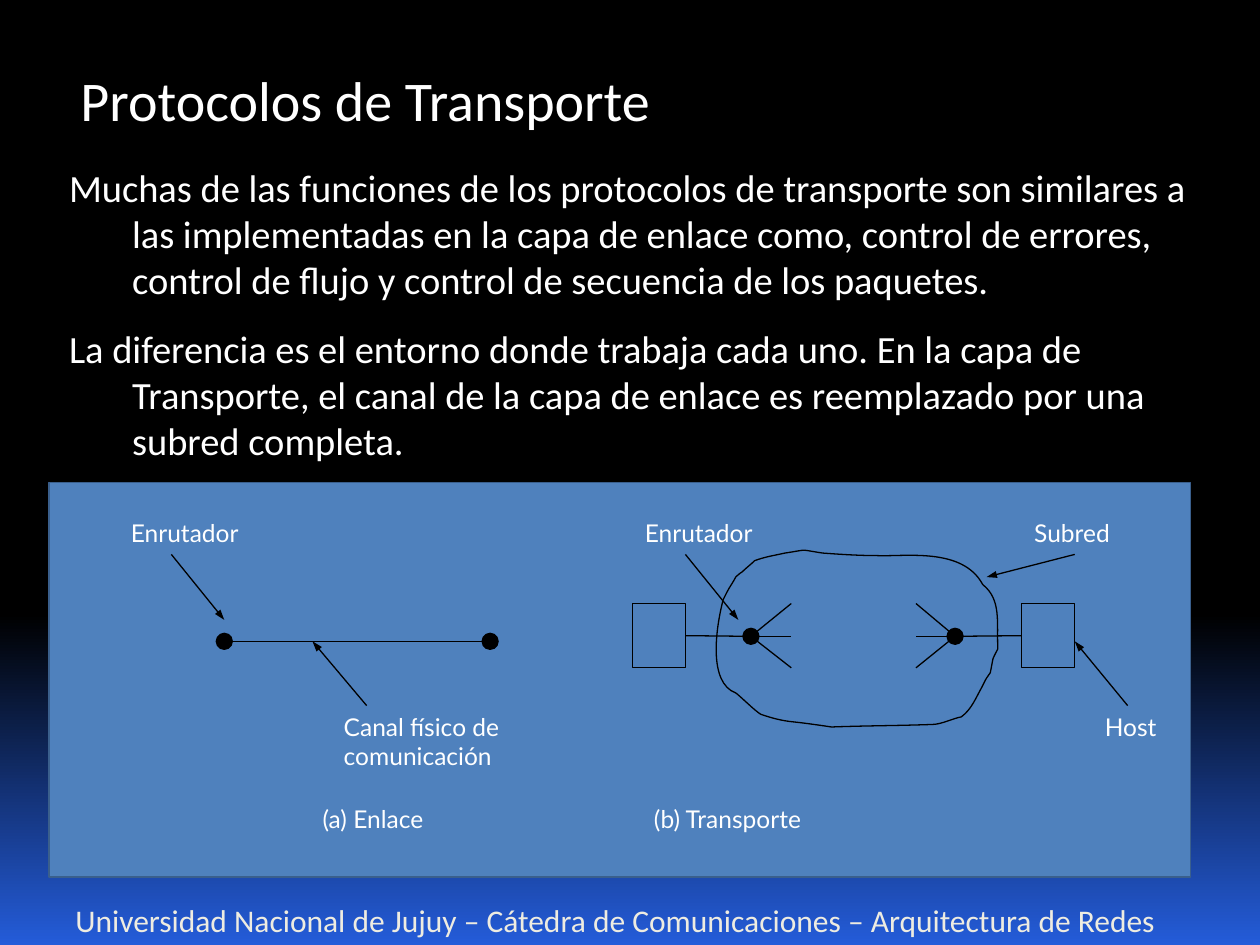
"""Build a slide comparing the link layer and the transport layer."""
from lxml import etree
from pptx import Presentation
from pptx.dml.color import RGBColor
from pptx.enum.shapes import MSO_CONNECTOR, MSO_SHAPE
from pptx.enum.text import MSO_ANCHOR
from pptx.oxml.ns import qn
from pptx.util import Inches, Pt


def color(value):
    return RGBColor.from_string(value)


def add_line(start, end, **ends):
    line = group.shapes.add_connector(
        MSO_CONNECTOR.STRAIGHT, *[Inches(value) for value in start + end])
    line.line.color.rgb = color("000000")
    line.line.width = Pt(0.75)
    properties = line._element.spPr
    for name, kind in ends.items():
        width, length = ("lg", "lg") if kind == "oval" else ("sm", "med")
        etree.SubElement(properties.find(qn("a:ln")), qn(f"a:{name}End"),
                         type=kind, w=width, len=length)
    etree.SubElement(properties, qn("a:effectLst"))
    return line


presentation = Presentation()
presentation.slide_width = Inches(10)
presentation.slide_height = Inches(7.5)
slide = presentation.slides.add_slide(presentation.slide_layouts[6])

fill = slide.background.fill
fill.gradient()
fill.gradient_angle = 270
for stop, position, value in zip(fill.gradient_stops, (0.65, 1), ("000000", "245CD9")):
    stop.position = position
    stop.color.rgb = color(value)

footer = slide.shapes.add_textbox(Inches(0.5), Inches(7.1), Inches(9.25), Inches(0.4))
footer.text_frame.word_wrap = True
footer.text_frame.vertical_anchor = MSO_ANCHOR.BOTTOM
paragraph = footer.text_frame.paragraphs[0]
paragraph.text = "Universidad Nacional de Jujuy – Cátedra de Comunicaciones – Arquitectura de Redes"
paragraph.font.name = "Calibri"
paragraph.font.size = Pt(18)
paragraph.font.color.rgb = color("EEECE1")

title = "Protocolos de Transporte"
body = (
    "Muchas de las funciones de los protocolos de transporte son similares a las "
    "implementadas en la capa de enlace como, control de errores, control de flujo "
    "y control de secuencia de los paquetes.\n"
    "La diferencia es el entorno donde trabaja cada uno. En la capa de Transporte, "
    "el canal de la capa de enlace es reemplazado por una subred completa."
)
for text, box, size, margin, indent in (
    (title, (0.47, 0.47, 9.08, 0.75), 32, 0.45, -0.38),
    (body, (0.31, 1.25, 9.32, 2.66), 22, 0.64, -0.5),
):
    shape = slide.shapes.add_textbox(*[Inches(value) for value in box])
    shape.text_frame.word_wrap = True
    shape.text_frame.text = text
    for paragraph in shape.text_frame.paragraphs:
        paragraph.space_before = Pt(7)
        paragraph.space_after = Pt(6)
        paragraph.font.name = "Calibri"
        paragraph.font.size = Pt(size)
        paragraph.font.color.rgb = color("FFFFFF")
        properties = paragraph._p.get_or_add_pPr()
        properties.set("marL", str(Inches(margin)))
        properties.set("indent", str(Inches(indent)))

group = slide.shapes.add_group_shape()
panel = group.shapes.add_shape(
    MSO_SHAPE.RECTANGLE, Inches(0.39), Inches(3.83), Inches(9.06), Inches(3.13))
panel.shadow.inherit = False
panel.fill.solid()
panel.fill.fore_color.rgb = color("4F81BD")
panel.line.color.rgb = color("3A5F8C")
panel.line.width = Pt(1)

add_line((1.78, 5.09), (3.89, 5.09), head="oval", tail="oval")

middle = 5.05
for host_left, host_side, site, node, branch_end in (
    (5.02, 5.44, 3, 5.96, 6.28),
    (8.11, 8.11, 1, 7.58, 7.27),
):
    host = group.shapes.add_shape(
        MSO_SHAPE.RECTANGLE, Inches(host_left), Inches(4.79), Inches(0.42), Inches(0.51))
    host.shadow.inherit = False
    host.fill.background()
    host.line.color.rgb = color("000000")
    host.line.width = Pt(0.75)
    link = add_line((host_side, middle), (node, middle), tail="oval")
    link.begin_connect(host, site)
    for branch_y in (4.79, middle, 5.3):
        add_line((node, middle), (branch_end, branch_y))

subnet_start = (6.23, 4.39)
subnet_curves = (
    (6.14, 4.41, 6.07, 4.42, 5.99, 4.45), (5.96, 4.48, 5.92, 4.51, 5.89, 4.54),
    (5.87, 4.55, 5.84, 4.58, 5.84, 4.58), (5.82, 4.62, 5.79, 4.66, 5.77, 4.7),
    (5.76, 4.72, 5.74, 4.76, 5.74, 4.76), (5.68, 4.99, 5.62, 5.42, 5.84, 5.5),
    (5.87, 5.52, 6, 5.65, 6.04, 5.67), (6.13, 5.7, 6.2, 5.72, 6.3, 5.73),
    (6.4, 5.74, 6.6, 5.77, 6.6, 5.77), (6.87, 5.76, 7.13, 5.76, 7.4, 5.75),
    (7.47, 5.75, 7.57, 5.7, 7.63, 5.69), (7.71, 5.63, 7.74, 5.55, 7.79, 5.46),
    (7.8, 5.44, 7.81, 5.42, 7.82, 5.4), (7.83, 5.38, 7.86, 5.34, 7.86, 5.34),
    (7.89, 5.19, 7.87, 5.25, 7.92, 5.15), (7.91, 4.94, 7.95, 4.76, 7.8, 4.64),
    (7.64, 4.34, 7.18, 4.42, 6.96, 4.41), (6.82, 4.41, 6.67, 4.4, 6.53, 4.39),
    (6.33, 4.36, 6.43, 4.36, 6.23, 4.39),
)
builder = group.shapes.build_freeform(*[Inches(value) for value in subnet_start])
builder.add_line_segments(
    [(Inches(curve[i]), Inches(curve[i + 1])) for curve in subnet_curves for i in (0, 2, 4)],
    close=True)
subnet = builder.convert_to_shape()
segments = list(subnet._element.iter(qn("a:lnTo")))
for first in range(0, len(subnet_curves) * 3, 3):
    bezier = etree.Element(qn("a:cubicBezTo"))
    segments[first].addprevious(bezier)
    for segment in segments[first:first + 3]:
        bezier.append(segment[0])
        segment.getparent().remove(segment)
subnet.shadow.inherit = False
subnet.fill.background()
subnet.line.color.rgb = color("000000")
subnet.line.width = Pt(0.75)

for start, end in (
    ((1.36, 4.4), (1.78, 4.92)),
    ((2.91, 5.6), (2.48, 5.09)),
    ((5.44, 4.4), (5.86, 4.92)),
    ((8.53, 4.4), (7.83, 4.58)),
    ((8.95, 5.6), (8.53, 5.09)),
):
    add_line(start, end, tail="triangle")

for text, box in (
    ("Enrutador", (0.94, 4.06, 1.25, 0.34)),
    ("Canal físico de comunicación", (2.63, 5.6, 1.67, 0.68)),
    ("Enrutador", (5.02, 4.06, 1.23, 0.34)),
    ("Subred", (8.11, 4.06, 0.98, 0.34)),
    ("Host", (8.67, 5.6, 0.7, 0.34)),
    ("(a) Enlace\t(b) Transporte", (2.34, 6.33, 6.39, 0.47)),
):
    label = group.shapes.add_textbox(*[Inches(value) for value in box])
    label.text_frame.word_wrap = True
    paragraph = label.text_frame.paragraphs[0]
    paragraph.text = text
    paragraph.space_after = Pt(10)
    paragraph.font.name = "Lato"
    paragraph.font.size = Pt(14)
    paragraph.font.color.rgb = color("FFFFFF")

label.text_frame.margin_left = Inches(0.22)
tabs = etree.Element(qn("a:tabLst"))
etree.SubElement(tabs, qn("a:tab"), pos=str(Inches(2.63)), algn="l")
paragraph._p.get_or_add_pPr().find(qn("a:spcAft")).addnext(tabs)

presentation.save("out.pptx")
